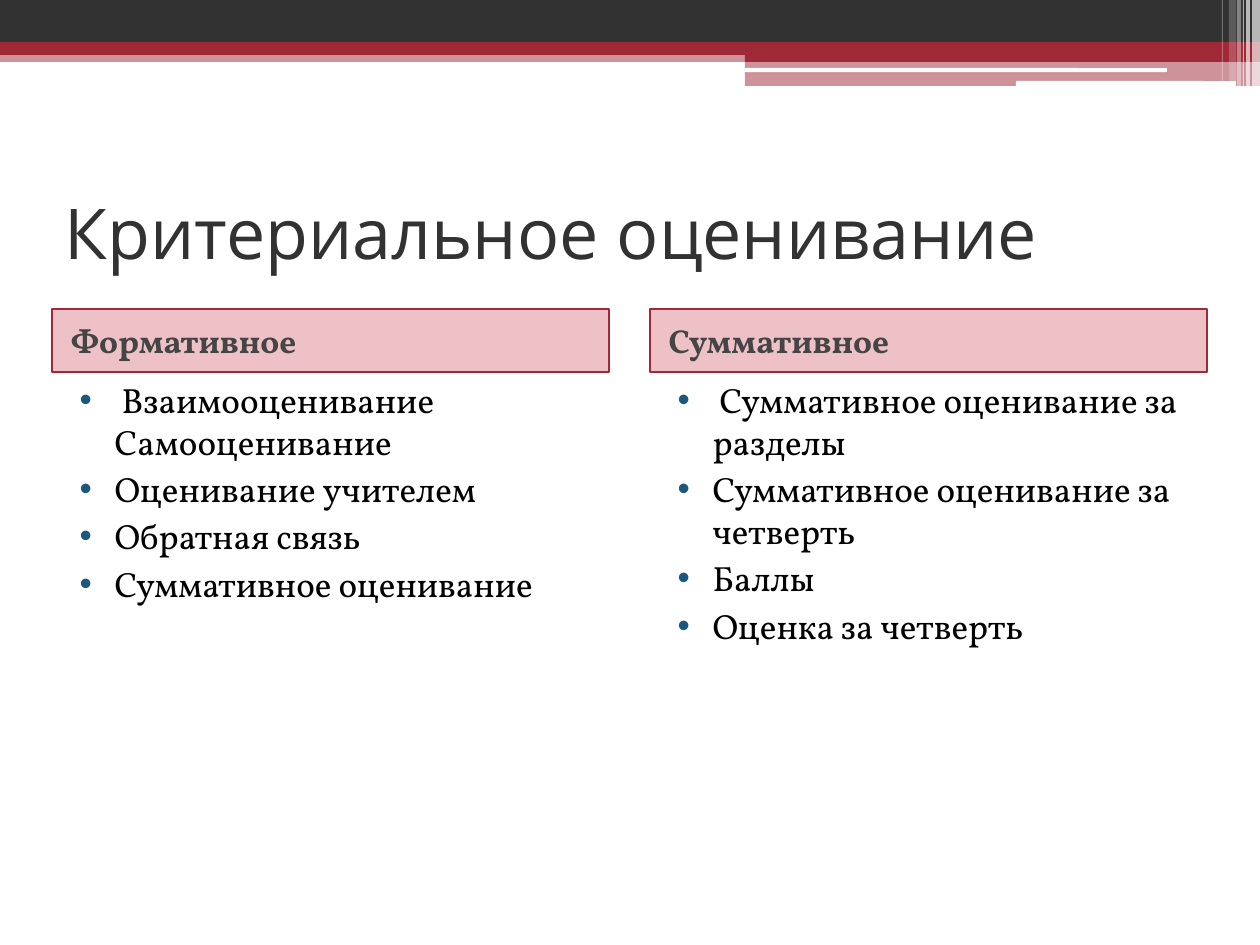
from typing import NamedTuple

import lxml.etree
import pptx
import pptx.dml.color
import pptx.enum.shapes
import pptx.enum.text
import pptx.oxml.ns
import pptx.util

EMU_PER_PX = 914400 / 126
HEADING_FONT = "Open Sans"
BODY_FONT = "Vollkorn"
DARK = "323232"
RED = "9F2936"
WHITE = "FFFFFF"
qn = pptx.oxml.ns.qn


class Band(NamedTuple):
    left: int
    top: int
    width: int
    height: int
    color: str
    opacity: int = 100
    rounded: bool = False


class Column(NamedTuple):
    left: int
    heading_idx: int
    list_idx: int
    heading: str
    items: tuple[str, ...]


BANDS = (
    Band(0, 50, 1260, 12, RED, 50),
    Band(0, 0, 1260, 42, DARK),
    Band(0, 42, 1260, 13, RED),
    Band(745, 49, 515, 13, RED),
    Band(745, 62, 515, 24, RED, 50),
    Band(745, 68, 422, 4, WHITE, rounded=True),
    Band(1016, 81, 220, 5, WHITE, rounded=True),
    Band(1252, 0, 8, 86, WHITE, 65),
    Band(1246, 0, 4, 86, WHITE, 65),
    Band(1243, 0, 1, 86, WHITE, 60),
    Band(1237, 0, 4, 86, WHITE, 40),
    Band(1229, 0, 7, 81, WHITE, 20),
    Band(1222, 0, 1, 81, WHITE, 30),
)

COLUMNS = (
    Column(52, 1, 2, "Формативное", (
        "\N{NO-BREAK SPACE}Взаимооценивание Самооценивание",
        "Оценивание учителем",
        "Обратная связь",
        "Суммативное оценивание",
    )),
    Column(650, 3, 4, "Суммативное", (
        "\N{NO-BREAK SPACE}Суммативное оценивание за разделы",
        "Суммативное оценивание за четверть",
        "Баллы",
        "Оценка за четверть",
    )),
)


def px(length: int) -> pptx.util.Emu:
    return pptx.util.Emu(round(length * EMU_PER_PX))


def rgb(color: str) -> pptx.dml.color.RGBColor:
    return pptx.dml.color.RGBColor.from_string(color)


def set_fill(shape, color: str, opacity: int = 100) -> None:
    shape.fill.solid()
    shape.fill.fore_color.rgb = rgb(color)
    if opacity < 100:
        srgb = shape.fill._xPr.find(qn("a:solidFill")).find(qn("a:srgbClr"))
        lxml.etree.SubElement(srgb, qn("a:alpha"), val=str(opacity * 1000))


def draw_band(slide, band: Band) -> None:
    kinds = pptx.enum.shapes.MSO_SHAPE
    kind = kinds.ROUNDED_RECTANGLE if band.rounded else kinds.RECTANGLE
    stripe = slide.shapes.add_shape(
        kind, px(band.left), px(band.top), px(band.width), px(band.height))
    stripe.shadow.inherit = False
    stripe.line.fill.background()
    set_fill(stripe, band.color, band.opacity)


def fill_placeholder(placeholder, box: tuple[int, int, int, int], lines: tuple[str, ...],
                     font: str, size: int, color: str, bold: bool = False,
                     anchor=pptx.enum.text.MSO_ANCHOR.MIDDLE) -> None:
    placeholder.left, placeholder.top, placeholder.width, placeholder.height = map(px, box)
    frame = placeholder.text_frame
    frame.text = "\n".join(lines)
    frame.word_wrap = True
    frame.auto_size = pptx.enum.text.MSO_AUTO_SIZE.NONE
    frame.vertical_anchor = anchor
    for paragraph in frame.paragraphs:
        paragraph.alignment = pptx.enum.text.PP_ALIGN.LEFT
        paragraph.font.name = font
        paragraph.font.size = pptx.util.Pt(size)
        paragraph.font.bold = bold
        paragraph.font.color.rgb = rgb(color)


def set_indent(paragraph, margin: int, indent: int) -> None:
    paragraph.space_before = pptx.util.Pt(3)
    properties = paragraph._p.get_or_add_pPr()
    properties.set("marL", str(px(margin)))
    properties.set("indent", str(px(indent)))


def add_bullet(paragraph, color: str) -> None:
    properties = paragraph._p.get_or_add_pPr()
    bullet_color = lxml.etree.Element(qn("a:buClr"))
    lxml.etree.SubElement(bullet_color, qn("a:srgbClr"), val=color)
    bullet_font = lxml.etree.Element(qn("a:buFont"), typeface="Arial")
    bullet = lxml.etree.Element(qn("a:buChar"), char="•")
    position = list(properties).index(properties.find(qn("a:defRPr")))
    properties[position:position] = [bullet_color, bullet_font, bullet]


def draw_column(slide, column: Column) -> None:
    parts = {part.placeholder_format.idx: part for part in slide.placeholders}
    heading = parts[column.heading_idx]
    fill_placeholder(heading, (column.left, 309, 557, 63), (column.heading,),
                     BODY_FONT, 19, "454545", bold=True)
    set_fill(heading, "BC0B1F", 25)
    heading.line.color.rgb = rgb(RED)
    heading.line.width = pptx.util.Pt(1)
    set_indent(heading.text_frame.paragraphs[0], 6, 0)

    topics = parts[column.list_idx]
    fill_placeholder(topics, (column.left, 372, 557, 536), column.items,
                     BODY_FONT, 20, "000000", anchor=pptx.enum.text.MSO_ANCHOR.TOP)
    for paragraph in topics.text_frame.paragraphs:
        set_indent(paragraph, 50, -35)
        add_bullet(paragraph, "1B587C")


def main() -> None:
    presentation = pptx.Presentation()
    presentation.slide_width = px(1260)
    presentation.slide_height = px(945)
    slide = presentation.slides.add_slide(presentation.slide_layouts.get_by_name("Comparison"))
    for band in BANDS:
        draw_band(slide, band)
    fill_placeholder(slide.shapes.title, (52, 158, 1156, 147), ("Критериальное оценивание",),
                     HEADING_FONT, 40, DARK)
    for column in COLUMNS:
        draw_column(slide, column)
    presentation.save("out.pptx")


if __name__ == "__main__":
    main()
